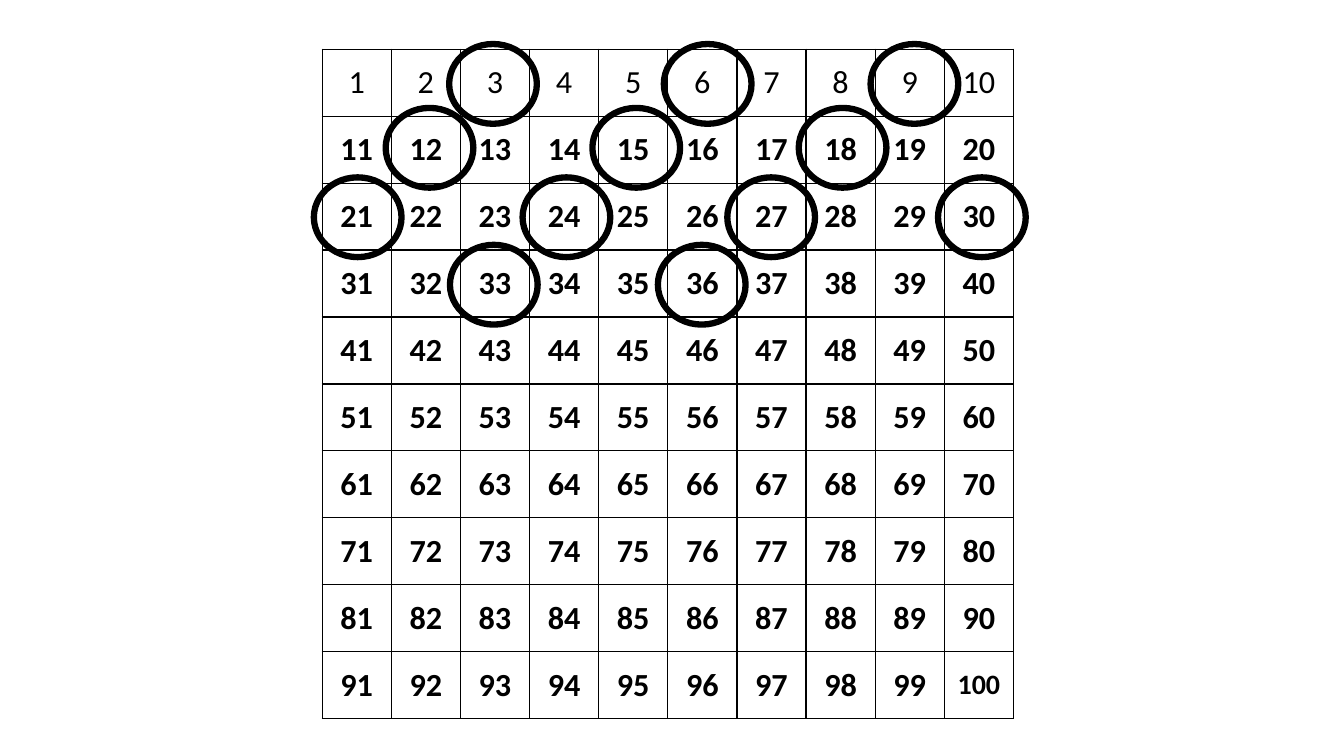
from lxml import etree
from pptx import Presentation
from pptx import util as u
from pptx.dml.color import RGBColor
from pptx.enum import shapes, text
from pptx.oxml import ns

BLACK = RGBColor(0x00, 0x00, 0x00)
FONT = "Calibri"
SIZE = 10  # rows and columns of the hundred chart

# Rings around the multiples of three: top of each row of rings and
# left of each ring, in cm from the corner of the chart
RING_W, RING_H = 2.21, 2.01
RING_ROWS = [
    (-0.13, [3.2, 8.61, 13.82]),          # 3, 6, 9
    (1.48, [1.6, 6.81, 12.01]),           # 12, 15, 18
    (3.23, [-0.21, 5.05, 10.21, 15.52]),  # 21, 24, 27, 30
    (4.93, [3.22, 8.46]),                 # 33, 36
]


def set_borders(cell):
    tcPr = cell._tc.get_or_add_tcPr()
    for side in ("a:lnL", "a:lnR", "a:lnT", "a:lnB"):
        ln = etree.SubElement(tcPr, ns.qn(side), w=str(u.Pt(1)))
        fill = etree.SubElement(ln, ns.qn("a:solidFill"))
        etree.SubElement(fill, ns.qn("a:srgbClr"), val=str(BLACK))


def fill_cell(cell, number):
    set_borders(cell)
    cell.fill.background()
    cell.vertical_anchor = text.MSO_ANCHOR.MIDDLE
    cell.margin_left = cell.margin_right = u.Cm(0.33)
    cell.margin_top = cell.margin_bottom = u.Cm(0.16)
    p = cell.text_frame.paragraphs[0]
    p.alignment = text.PP_ALIGN.CENTER
    r = p.add_run()
    r.text = str(number)
    r.font.name = FONT
    r.font.size = u.Pt(20 if number == 100 else 23)
    r.font.bold = number > SIZE
    r.font.color.rgb = BLACK


def add_hundred_chart(s, left, top, width, height):
    tbl = s.shapes.add_table(SIZE, SIZE, u.Cm(left), u.Cm(top),
                             u.Cm(width), u.Cm(height)).table
    tbl.first_row = tbl.horz_banding = False
    for col in tbl.columns:
        col.width = u.Cm(width / SIZE)
    for row in tbl.rows:
        row.height = u.Cm(height / SIZE)
    for i, cell in enumerate(tbl.iter_cells()):
        fill_cell(cell, i + 1)


def add_rings(s, left, top):
    for dy, offsets in RING_ROWS:
        for dx in offsets:
            sp = s.shapes.add_shape(shapes.MSO_SHAPE.OVAL, u.Cm(left + dx),
                                    u.Cm(top + dy), u.Cm(RING_W), u.Cm(RING_H))
            sp.shadow.inherit = False
            sp.fill.background()
            sp.line.color.rgb = BLACK
            sp.line.width = u.Pt(4.5)


def main():
    prs = Presentation()
    prs.slide_width, prs.slide_height = u.Cm(33.87), u.Cm(19.05)
    s = prs.slides.add_slide(prs.slide_layouts[6])

    # Hundred chart, then the rings over it
    left, top = 8.12, 1.24
    add_hundred_chart(s, left, top, 17.42, 16.87)
    add_rings(s, left, top)

    prs.save("out.pptx")


if __name__ == "__main__":
    main()
